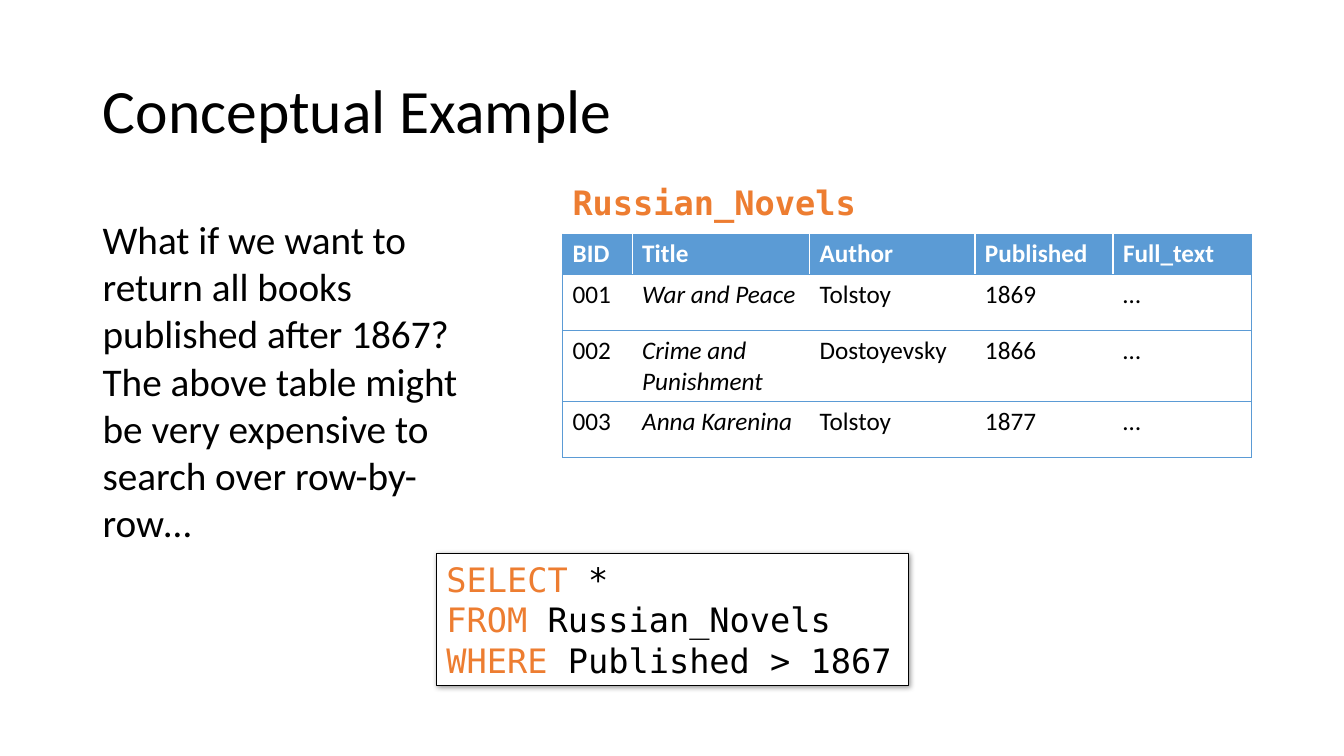
from pptx import Presentation
from pptx.dml.color import RGBColor
from pptx.enum.shapes import MSO_SHAPE
from pptx.enum.text import MSO_ANCHOR, PP_ALIGN
from pptx.oxml import parse_xml
from pptx.oxml.ns import nsdecls
from pptx.util import Inches, Pt

BLACK = RGBColor(0x00, 0x00, 0x00)
WHITE = RGBColor(0xFF, 0xFF, 0xFF)
BLUE = RGBColor(0x5B, 0x9B, 0xD5)
ORANGE = RGBColor(0xED, 0x7D, 0x31)
SANS = "Calibri"
MONO = "DejaVu Sans Mono"

QUESTION = ("What if we want to return all books published after 1867? "
            "The above table might be very expensive to search over row-by-row…")
QUERY = [("SELECT ", "*"), ("FROM ", "Russian_Novels"), ("WHERE ", "Published > 1867")]
NOVELS = [
    ("BID", "Title", "Author", "Published", "Full_text"),
    ("001", "War and Peace", "Tolstoy", "1869", "…"),
    ("002", "Crime and Punishment", "Dostoyevsky", "1866", "…"),
    ("003", "Anna Karenina", "Tolstoy", "1877", "…"),
]
COLUMN_WIDTHS = (0.69, 1.76, 1.64, 1.37, 1.37)
HEADER_HEIGHT, ROW_HEIGHT = 0.33, 0.56


class SlideBuilder:
    """Holds the text style and the current slide, and adds elements to it."""

    def __init__(self, page):
        """Keep the slide that receives the elements."""
        self.page = page

    def span(self, para, text, size, color=BLACK, font=SANS, bold=False, italic=False):
        """Add one formatted run to a paragraph."""
        run = para.add_run()
        run.text = text
        run.font.name, run.font.size = font, Pt(size)
        run.font.bold, run.font.italic = bold, italic
        run.font.color.rgb = color

    def title(self, text, left, top, width, height):
        """Move and fill the title placeholder."""
        box = self.page.shapes.title
        box.left, box.top = Inches(left), Inches(top)
        box.width, box.height = Inches(width), Inches(height)
        box.text_frame.vertical_anchor = MSO_ANCHOR.MIDDLE
        para = box.text_frame.paragraphs[0]
        para.alignment, para.line_spacing = PP_ALIGN.LEFT, 0.9
        self.span(para, text, 44)

    def text(self, text, left, top, width, height, size, wrap=True, **style):
        """Add a text box with one paragraph."""
        box = self.page.shapes.add_textbox(
            Inches(left), Inches(top), Inches(width), Inches(height))
        box.text_frame.word_wrap = wrap
        self.span(box.text_frame.paragraphs[0], text, size, **style)

    def code(self, lines, left, top, width, height):
        """Add a framed code box with coloured keywords and a soft shadow."""
        box = self.page.shapes.add_shape(
            MSO_SHAPE.RECTANGLE, Inches(left), Inches(top), Inches(width), Inches(height))
        box.fill.solid()
        box.fill.fore_color.rgb = WHITE
        box.line.color.rgb, box.line.width = BLACK, Pt(0.75)
        box._element.spPr.append(parse_xml(
            f'<a:effectLst {nsdecls("a")}><a:outerShdw blurRad="{Pt(4)}" dist="{Pt(1)}" '
            'dir="2700000" algn="tl" rotWithShape="0"><a:srgbClr val="000000">'
            '<a:alpha val="40000"/></a:srgbClr></a:outerShdw></a:effectLst>'))
        frame = box.text_frame
        frame.word_wrap = False
        for index, (keyword, rest) in enumerate(lines):
            para = frame.add_paragraph() if index else frame.paragraphs[0]
            para.alignment = PP_ALIGN.LEFT
            self.span(para, keyword, 24, ORANGE, MONO)
            self.span(para, rest, 24, BLACK, MONO)

    def border(self, cell, sides):
        """Draw thin blue lines on the given sides of a cell."""
        for side in sides:
            cell._tc.get_or_add_tcPr().append(parse_xml(
                f'<a:ln{side} {nsdecls("a")} w="{Pt(0.5)}"><a:solidFill>'
                f'<a:srgbClr val="{BLUE}"/></a:solidFill></a:ln{side}>'))

    def table(self, rows, left, top):
        """Add a table with a blue header, row lines and italic second column."""
        heights = [HEADER_HEIGHT] + [ROW_HEIGHT] * (len(rows) - 1)
        table = self.page.shapes.add_table(
            len(rows), len(COLUMN_WIDTHS), Inches(left), Inches(top),
            Inches(sum(COLUMN_WIDTHS)), Inches(sum(heights))).table
        table.horz_banding = False
        for column, width in zip(table.columns, COLUMN_WIDTHS):
            column.width = Inches(width)
        last = len(COLUMN_WIDTHS) - 1
        for r, values in enumerate(rows):
            header = r == 0
            table.rows[r].height = Inches(heights[r])
            for c, value in enumerate(values):
                cell = table.cell(r, c)
                edges = {0: ["L"], last: ["R"]}.get(c, [])
                self.border(cell, edges + ["T", "B"])
                cell.fill.solid()
                cell.fill.fore_color.rgb = BLUE if header else WHITE
                self.span(cell.text_frame.paragraphs[0], value, 18,
                          WHITE if header else BLACK,
                          bold=header, italic=c == 1 and not header)


def main():
    """Build the slide and save the deck."""
    deck = Presentation()
    deck.slide_width, deck.slide_height = Inches(13.33), Inches(7.5)
    builder = SlideBuilder(deck.slides.add_slide(deck.slide_layouts.get_by_name("Title Only")))
    builder.title("Conceptual Example", 0.92, 0.4, 11.5, 1.45)
    builder.text(QUESTION, 0.92, 2.09, 4.16, 2.93, 28)
    builder.code(QUERY, 4.33, 5.49, 4.68, 1.31)
    builder.table(NOVELS, 5.58, 2.32)
    builder.text("Russian_Novels", 5.58, 1.76, 3.05, 0.5, 24, wrap=False,
                 color=ORANGE, font=MONO, bold=True)
    deck.save("out.pptx")


if __name__ == "__main__":
    main()
